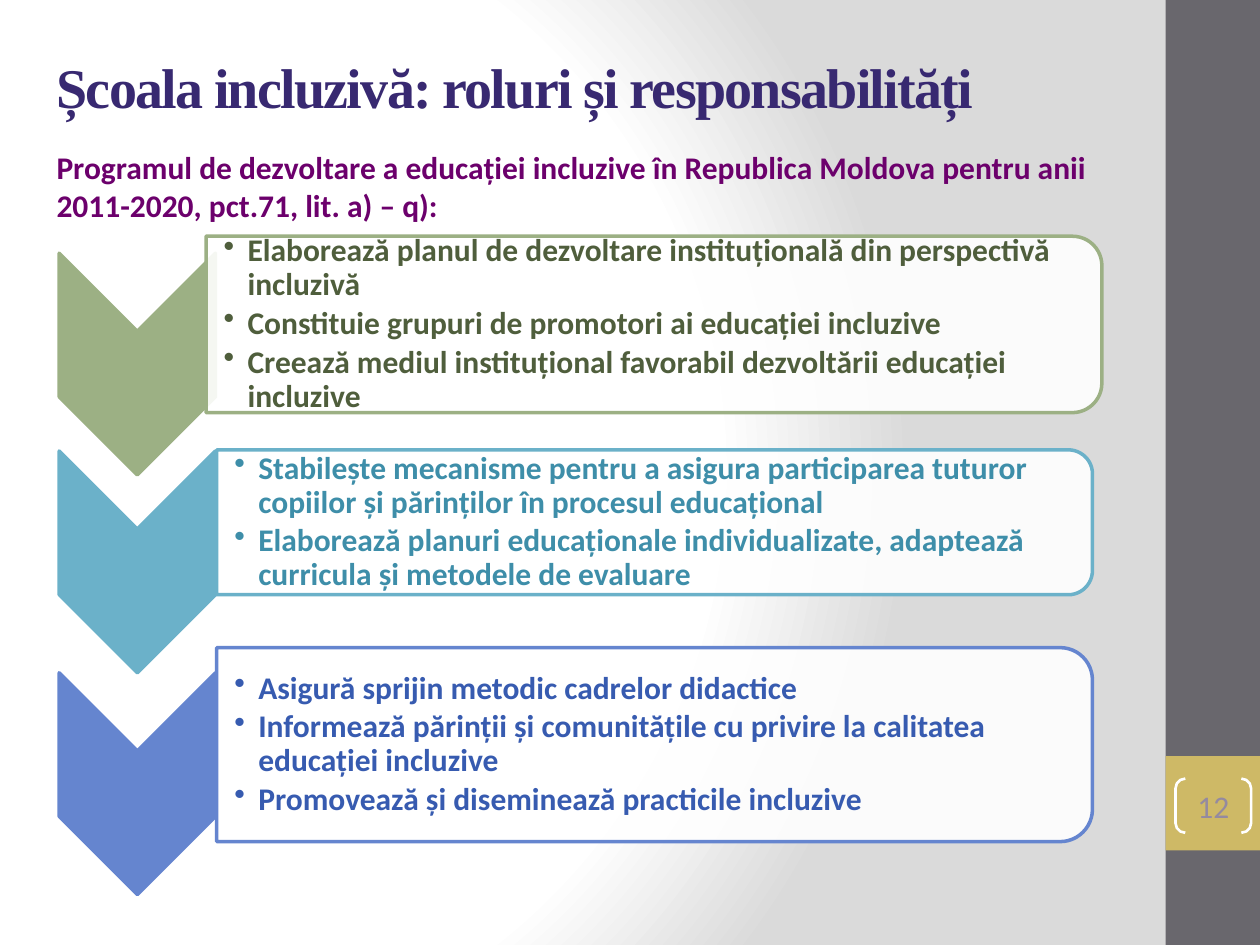
import pptx
import pptx.dml.color
import pptx.enum.shapes
import pptx.enum.text
import pptx.oxml
import pptx.oxml.ns
import pptx.util
from lxml import etree

RGBColor = pptx.dml.color.RGBColor
Shape = pptx.enum.shapes.MSO_SHAPE
Align = pptx.enum.text.PP_ALIGN
Anchor = pptx.enum.text.MSO_ANCHOR
qn = pptx.oxml.ns.qn

# Grid of 100 columns by 75 rows
WIDTH, HEIGHT = pptx.util.Inches(10), pptx.util.Inches(7.5)
COLUMN, ROW = WIDTH / 100, HEIGHT / 75

WHITE = RGBColor(0xFF, 0xFF, 0xFF)
GRAY = RGBColor(0xDA, 0xDA, 0xDA)
SIDEBAR = RGBColor(0x69, 0x67, 0x6D)
GOLD = RGBColor(0xCE, 0xB9, 0x66)
NUMBER = RGBColor(0x94, 0x8A, 0xA0)
TITLE = RGBColor(0x38, 0x29, 0x71)
PURPLE = RGBColor(0x6C, 0x00, 0x6C)
GREEN, DARK_GREEN = RGBColor(0x9C, 0xB0, 0x84), RGBColor(0x4F, 0x5E, 0x3C)
TEAL, DARK_TEAL = RGBColor(0x6B, 0xB1, 0xC9), RGBColor(0x3E, 0x8E, 0xA9)
BLUE, DARK_BLUE = RGBColor(0x65, 0x85, 0xCF), RGBColor(0x37, 0x5B, 0xB0)

CHEVRON_LEFT, CHEVRON_WIDTH, CHEVRON_HEIGHT = 4.7, 12.4, 17.6

# Chevron top, panel (left, top, width, height), colour, text colour, items
STEPS = [
    (20.1, (16.35, 18.75, 71.1, 14), GREEN, DARK_GREEN, [
        "Elaborează planul de dezvoltare instituțională din perspectivă incluzivă",
        "Constituie grupuri de promotori ai educației incluzive",
        "Creează mediul instituțional favorabil dezvoltării educației incluzive",
    ]),
    (35.8, (17.2, 35.7, 69.5, 11.5), TEAL, DARK_TEAL, [
        "Stabilește mecanisme pentru a asigura participarea tuturor copiilor și "
        "părinților în procesul educațional",
        "Elaborează planuri educaționale individualizate, adaptează curricula și "
        "metodele de evaluare",
    ]),
    (53.4, (17.2, 51.4, 69.5, 15.4), BLUE, DARK_BLUE, [
        "Asigură sprijin metodic cadrelor didactice",
        "Informează părinții și comunitățile cu privire la calitatea educației incluzive",
        "Promovează și diseminează practicile incluzive",
    ]),
]


def place(left, top, width, height):
    """Turn grid columns and rows into slide lengths."""
    return [round(size) for size in
            (left * COLUMN, top * ROW, width * COLUMN, height * ROW)]


def paint_background(page):
    """Radial gradient, white around the left and gray towards the right."""
    page.background.fill.solid()
    solid = page.element.find(".//" + qn("p:bgPr")).find(qn("a:solidFill"))
    stops = "".join(
        f'<a:gs pos="{share * 1000}"><a:srgbClr val="{color}"/></a:gs>'
        for share, color in ((0, WHITE), (75, WHITE), (100, GRAY)))
    gradient = pptx.oxml.parse_xml(
        f'<a:gradFill {pptx.oxml.ns.nsdecls("a")} rotWithShape="1">'
        f'<a:gsLst>{stops}</a:gsLst><a:path path="circle">'
        '<a:fillToRect l="20000" t="50000" r="100000" b="50000"/>'
        '</a:path></a:gradFill>')
    solid.getparent().replace(solid, gradient)


def add_figure(page, kind, area, fill=None, line=None, weight=2, alpha=None, turned=False):
    """Preset shape that covers an area, turned a quarter if asked."""
    left, top, width, height = place(*area)
    if turned:
        left, top = left + (width - height) // 2, top + (height - width) // 2
        width, height = height, width
    shape = page.shapes.add_shape(kind, left, top, width, height)
    shape.shadow.inherit = False
    shape.rotation = 90 if turned else 0
    if fill is None:
        shape.fill.background()
    else:
        shape.fill.solid()
        shape.fill.fore_color.rgb = fill
    if alpha is not None:
        color = shape.element.spPr.find(qn("a:solidFill"))[0]
        etree.SubElement(color, qn("a:alpha"), val=str(alpha * 1000))
    if line is None:
        shape.line.fill.background()
    else:
        shape.line.color.rgb = line
        shape.line.width = pptx.util.Pt(weight)
    return shape


def add_bullet(para):
    properties = para._p.get_or_add_pPr()
    indent = pptx.util.Inches(0.19)
    properties.set("marL", str(indent))
    properties.set("indent", str(-indent))
    etree.SubElement(properties, qn("a:buChar"), char="•")


def write(box, texts, color, size=18, font="Calibri", bold=True, align=Align.LEFT,
          insets=(0.1, 0.05, 0.1, 0.05), bullets=False, spacing=None):
    """Fill a box with one paragraph per text, centred vertically."""
    frame = box.text_frame
    frame.word_wrap = True
    frame.vertical_anchor = Anchor.MIDDLE
    (frame.margin_left, frame.margin_top, frame.margin_right,
     frame.margin_bottom) = map(pptx.util.Inches, insets)
    for index, text in enumerate(texts):
        para = frame.paragraphs[0] if index == 0 else frame.add_paragraph()
        para.alignment = align
        if bullets:
            para.line_spacing = 0.9
            para.space_after = pptx.util.Pt(0.15 * size)
            add_bullet(para)
        span = para.add_run()
        span.text = text
        span.font.name = font
        span.font.size = pptx.util.Pt(size)
        span.font.bold = bold
        span.font.color.rgb = color
        if spacing is not None:
            span.font._element.set("spc", str(spacing * 100))


def add_text(page, area, texts, color, **style):
    write(page.shapes.add_textbox(*place(*area)), texts, color, **style)


def add_step(page, chevron_top, panel, color, text_color, items):
    """Downward chevron with its panel of bulleted duties."""
    add_figure(page, Shape.CHEVRON,
               (CHEVRON_LEFT, chevron_top, CHEVRON_WIDTH, CHEVRON_HEIGHT),
               fill=color, line=color, turned=True)
    add_figure(page, Shape.ROUND_2_SAME_RECTANGLE, panel,
               fill=WHITE, line=color, alpha=90, turned=True)
    # The text keeps clear of the rounded corners
    left, top, width, height = panel
    corner = 0.05 * height
    add_text(page, (left, top + corner, width - corner, height - 2 * corner),
             items, text_color, bullets=True, insets=(0.14, 0.01, 0.01, 0.01))


def main():
    deck = pptx.Presentation()
    deck.slide_width, deck.slide_height = WIDTH, HEIGHT
    page = deck.slides.add_slide(deck.slide_layouts[6])

    # Background and side band
    paint_background(page)
    add_figure(page, Shape.RECTANGLE, (92.5, 0, 7.5, 75), fill=SIDEBAR)
    add_figure(page, Shape.RECTANGLE, (92.5, 60, 7.5, 7.5), fill=GOLD)

    # Title
    add_text(page, (3.5, 3, 87.8, 7.7), ["Școala incluzivă: roluri și responsabilități"],
             TITLE, size=32, font="Times New Roman", spacing=-1)

    # Three steps
    for step in STEPS:
        add_step(page, *step)

    # Page number
    bracket = add_figure(page, Shape.DOUBLE_BRACKET, (93.3, 61.8, 6, 4.3),
                         line=WHITE, weight=1.5)
    bracket.adjustments[0] = 0.18
    write(bracket, ["12"], NUMBER, bold=False, align=Align.CENTER, insets=(0, 0, 0, 0))

    # Programme reference
    add_text(page, (3.5, 10.9, 87.8, 7.7),
             ["Programul de dezvoltare a educației incluzive în Republica Moldova "
              "pentru anii 2011-2020, pct.71, lit. a) – q):"], PURPLE)

    deck.save("out.pptx")


if __name__ == "__main__":
    main()
